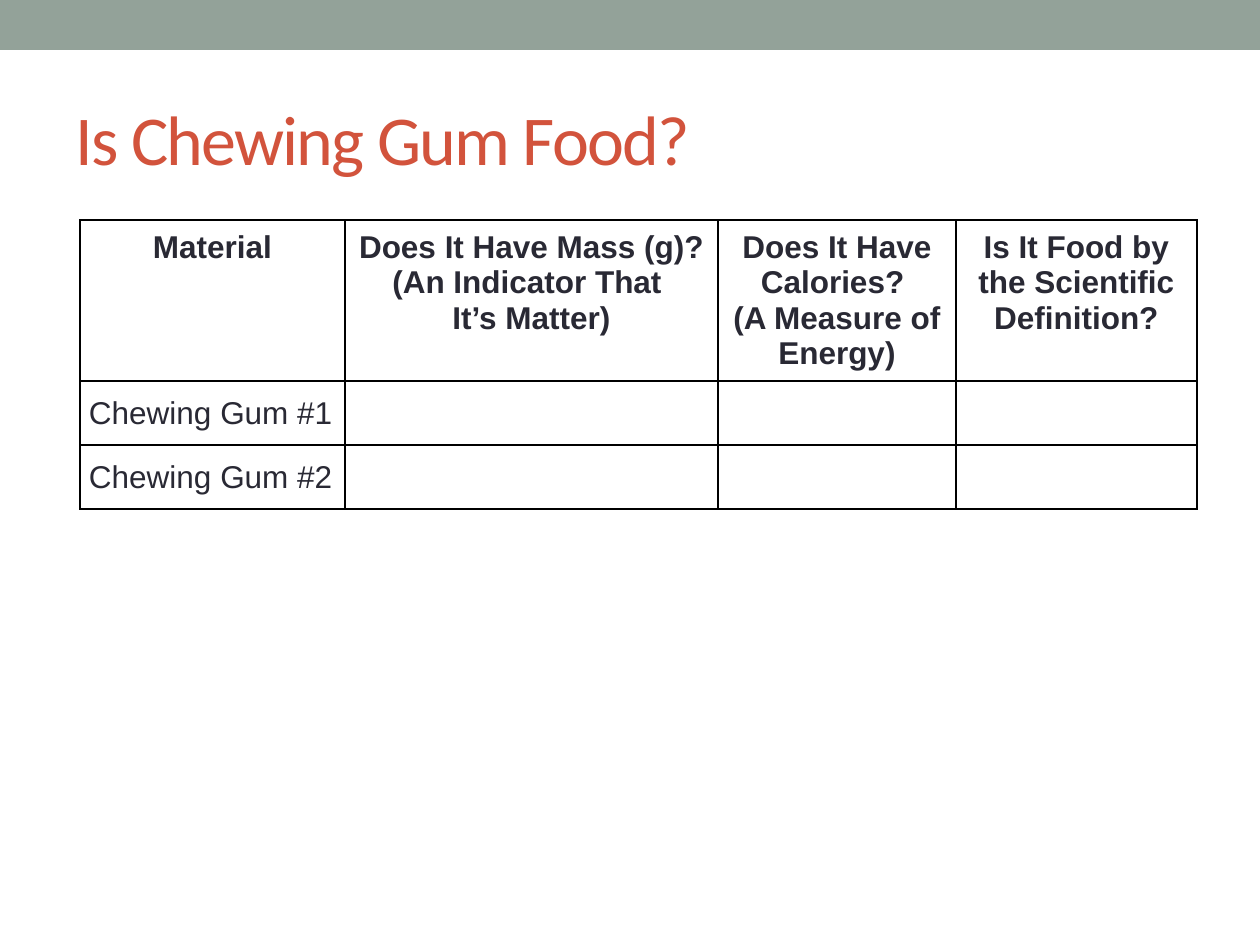
import pptx
import pptx.util
import pptx.dml.color
import pptx.enum.shapes
import pptx.enum.text
import pptx.oxml
import pptx.oxml.ns

RGB = pptx.dml.color.RGBColor
ALIGN = pptx.enum.text.PP_ALIGN
ANCHOR = pptx.enum.text.MSO_ANCHOR
PX = 914400 // 126

# Content: each cell is a list of paragraphs, each paragraph a list of lines
TITLE = "Is Chewing Gum Food?"
HEADS = [
    [["Material"]],
    [["Does It Have Mass (g)?"], ["(An Indicator That ", "It’s Matter)"]],
    [["Does It Have Calories? ", "(A Measure of Energy)"]],
    [["Is It Food by the Scientific Definition?"]],
]
GUMS = ["Chewing Gum #1", "Chewing Gum #2"]
COLS = [265, 373, 238, 241]
ROWS = [160, 64, 64]

SAGE = RGB(0x93, 0xA2, 0x99)
RUST = RGB(0xD2, 0x53, 0x3C)
INK = RGB(0x29, 0x29, 0x34)
WHITE = RGB(0xFF, 0xFF, 0xFF)
BLACK = RGB(0, 0, 0)


def box(*sides):
    return [side * PX for side in sides]


def add_run(para, text, face, size, color, bold=False):
    run = para.add_run()
    run.text = text
    font = run.font
    font.name, font.size, font.bold = face, pptx.util.Pt(size), bold
    font.color.rgb = color
    return run


def fill_cell(cell, paras, bold, align):
    frame = cell.text_frame
    for num, lines in enumerate(paras):
        para = frame.add_paragraph() if num else frame.paragraphs[0]
        para.alignment = align
        for at, line in enumerate(lines):
            if at:
                para.add_line_break()
            add_run(para, line, "Arial", 18, INK, bold)


def pad(cell, wide, high):
    cell.margin_left = cell.margin_right = wide * PX
    cell.margin_top = cell.margin_bottom = high * PX


def rule_cell(cell):
    props = cell._tc.get_or_add_tcPr()
    for num, side in enumerate(("lnL", "lnR", "lnT", "lnB")):
        props.insert(num, pptx.oxml.parse_xml(
            f'<a:{side} {pptx.oxml.ns.nsdecls("a")} w="12700"><a:solidFill>'
            f'<a:srgbClr val="{BLACK}"/></a:solidFill></a:{side}>'))


deck = pptx.Presentation()
deck.slide_width, deck.slide_height = box(1260, 945)
slide = deck.slides.add_slide(deck.slide_layouts[5])

# Top band
band = slide.shapes.add_shape(
    pptx.enum.shapes.MSO_SHAPE.RECTANGLE, *box(0, 0, 1260, 50))
band.shadow.inherit = False
band.fill.solid()
band.fill.fore_color.rgb = SAGE
band.line.fill.background()

# Title
title = slide.shapes.title
title.left, title.top, title.width, title.height = box(63, 55, 1134, 165)
title.text_frame.vertical_anchor = ANCHOR.MIDDLE
head = title.text_frame.paragraphs[0]
head.alignment = ALIGN.LEFT
run = add_run(head, TITLE, "Calibri", 40, RUST)
run.font._element.set("spc", "-100")

# Table
table = slide.shapes.add_table(
    len(ROWS), len(COLS), *box(80, 220, sum(COLS), sum(ROWS))).table
for col, width in zip(table.columns, COLS):
    col.width = width * PX
for row, height in zip(table.rows, ROWS):
    row.height = height * PX
for cell in table.iter_cells():
    cell.fill.solid()
    cell.fill.fore_color.rgb = WHITE
    rule_cell(cell)

# Header row and gum names
for num, paras in enumerate(HEADS):
    cell = table.cell(0, num)
    pad(cell, 10, 10)
    fill_cell(cell, paras, True, ALIGN.CENTER)
for num, name in enumerate(GUMS, 1):
    cell = table.cell(num, 0)
    pad(cell, 9, 0)
    cell.vertical_anchor = ANCHOR.MIDDLE
    fill_cell(cell, [[name]], False, ALIGN.LEFT)

deck.save("out.pptx")
